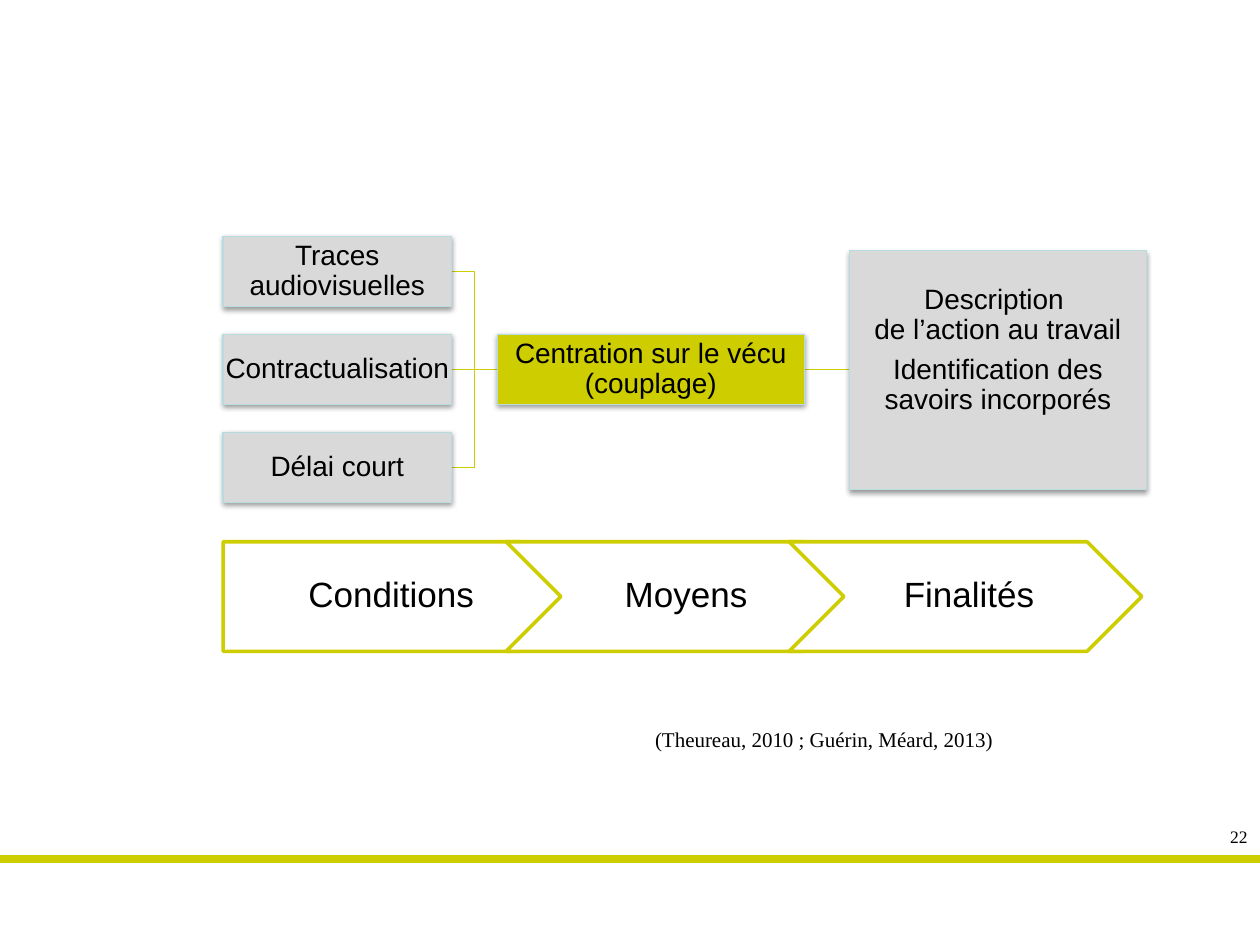
from lxml.etree import SubElement
from pptx import Presentation
from pptx.dml.color import RGBColor
from pptx.enum.shapes import MSO_CONNECTOR as CN, MSO_SHAPE as SH
from pptx.enum.text import MSO_ANCHOR as ANCHOR, PP_ALIGN as AL
from pptx.oxml.ns import qn
from pptx.util import Pt

LIME, GREY, EDGE, WHITE, BLACK = "CDCD00", "D9D9D9", "B6DCDF", "FFFFFF", "000000"


def rgb(value):
    return RGBColor.from_string(value)


def write(s, paragraphs, size, font, align, insets, spacing=None, anchor=ANCHOR.MIDDLE):
    tf = s.text_frame
    names = ("margin_left", "margin_top", "margin_right", "margin_bottom")
    frame = dict(zip(names, map(Pt, insets)), word_wrap=True, vertical_anchor=anchor)
    for key, value in frame.items():
        setattr(tf, key, value)
    for i, text in enumerate(paragraphs):
        p = tf.add_paragraph() if i else tf.paragraphs[0]
        p.text = text
        p.alignment = align
        p.line_spacing = spacing
        if i:
            p.space_before = Pt(0.35 * size)
        for r in p.runs:
            for key, value in {"size": Pt(size), "name": font}.items():
                setattr(r.font, key, value)
            r.font.color.rgb = rgb(BLACK)


prs = Presentation()
prs.slide_width, prs.slide_height = Pt(720), Pt(540)
sp = prs.slides.add_slide(prs.slide_layouts[6]).shapes

left, mid = 127.5, 211
box_h, box_pitch = 40, 56
box_w, hub_x, hub_w = 130.5, 284.3, 175.3
goal_x, goal_w, goal_h = 485.5, 169.5, 136.5

bracket_x = left + box_w
spine_x = (bracket_x + hub_x) / 2

for x1, y1, x2, y2, width in [
    (720, 491, 0, 491, 4.5),
    (hub_x, mid, bracket_x, mid, 0.75),
    (goal_x, mid, hub_x + hub_w, mid, 0.75),
]:
    s = sp.add_connector(CN.STRAIGHT, Pt(x1), Pt(y1), Pt(x2), Pt(y2))
    s.line.color.rgb = rgb(LIME)
    s.line.width = Pt(width)
    SubElement(s._element.spPr, qn("a:effectLst"))

for y in (mid + box_pitch, mid - box_pitch):
    fb = sp.build_freeform(Pt(hub_x), Pt(mid))
    fb.add_line_segments(
        [(Pt(spine_x), Pt(mid)), (Pt(spine_x), Pt(y)), (Pt(bracket_x), Pt(y))], close=False
    )
    s = fb.convert_to_shape()
    s.shadow.inherit = False
    s.fill.background()
    s.line.color.rgb = rgb(LIME)
    s.line.width = Pt(0.75)

boxes = [
    (goal_x, mid + 0.5, goal_w, goal_h, GREY, 23,
     ["Description \vde l’action au travail", "Identification des savoirs incorporés"]),
    (hub_x, mid, hub_w, box_h, LIME, 0.7, ["Centration sur le vécu (couplage)"]),
]
for i, text in enumerate(["Traces audiovisuelles", "Contractualisation", "Délai court"]):
    boxes.append((left, mid + (i - 1) * box_pitch, box_w, box_h, GREY, 0.7, [text]))

for x, center, w, h, fill, bottom, texts in boxes:
    s = sp.add_shape(SH.RECTANGLE, Pt(x), Pt(center - h / 2), Pt(w), Pt(h))
    s.fill.solid()
    s.fill.fore_color.rgb = rgb(fill)
    s.line.color.rgb = rgb(EDGE)
    s.line.width = Pt(0.75)
    s.shadow.inherit = False
    effects = s._element.spPr.find(qn("a:effectLst"))
    shadow = SubElement(effects, qn("a:outerShdw"), blurRad=str(Pt(3.1)),
                        dist=str(Pt(1.6)), dir="5400000", rotWithShape="0")
    color = SubElement(shadow, qn("a:srgbClr"), val=BLACK)
    SubElement(color, qn("a:alpha"), val="38000")
    write(s, texts, 16, "Arial", AL.CENTER, (0.7, 0.7, 0.7, bottom), 0.9)

step_pitch = 161.7
for i, (kind, inset, text) in enumerate([
    (SH.PENTAGON, 8.4, "Conditions"),
    (SH.CHEVRON, 6.3, "Moyens"),
    (SH.CHEVRON, 6.3, "Finalités"),
]):
    s = sp.add_shape(kind, Pt(left + i * step_pitch), Pt(309.6), Pt(201.6), Pt(62.6))
    s.shadow.inherit = False
    s.fill.solid()
    s.fill.fore_color.rgb = rgb(WHITE)
    s.line.color.rgb = rgb(LIME)
    s.line.width = Pt(2)
    write(s, [text], 20, "Arial", AL.CENTER, (inset, 4.2, 2.1, 4.2), 0.9)

for x, y, w, h, size, align, text in [
    (367.2, 411.8, 287.3, 21.6, 12, AL.LEFT, "(Theureau, 2010 ; Guérin, Méard, 2013)"),
    (683.3, 468.7, 36.7, 19.4, 10, AL.RIGHT, "22"),
]:
    s = sp.add_textbox(Pt(x), Pt(y), Pt(w), Pt(h))
    write(s, [text], size, "Times New Roman", align, (7.2, 3.6, 7.2, 3.6), anchor=ANCHOR.TOP)

prs.save("out.pptx")
